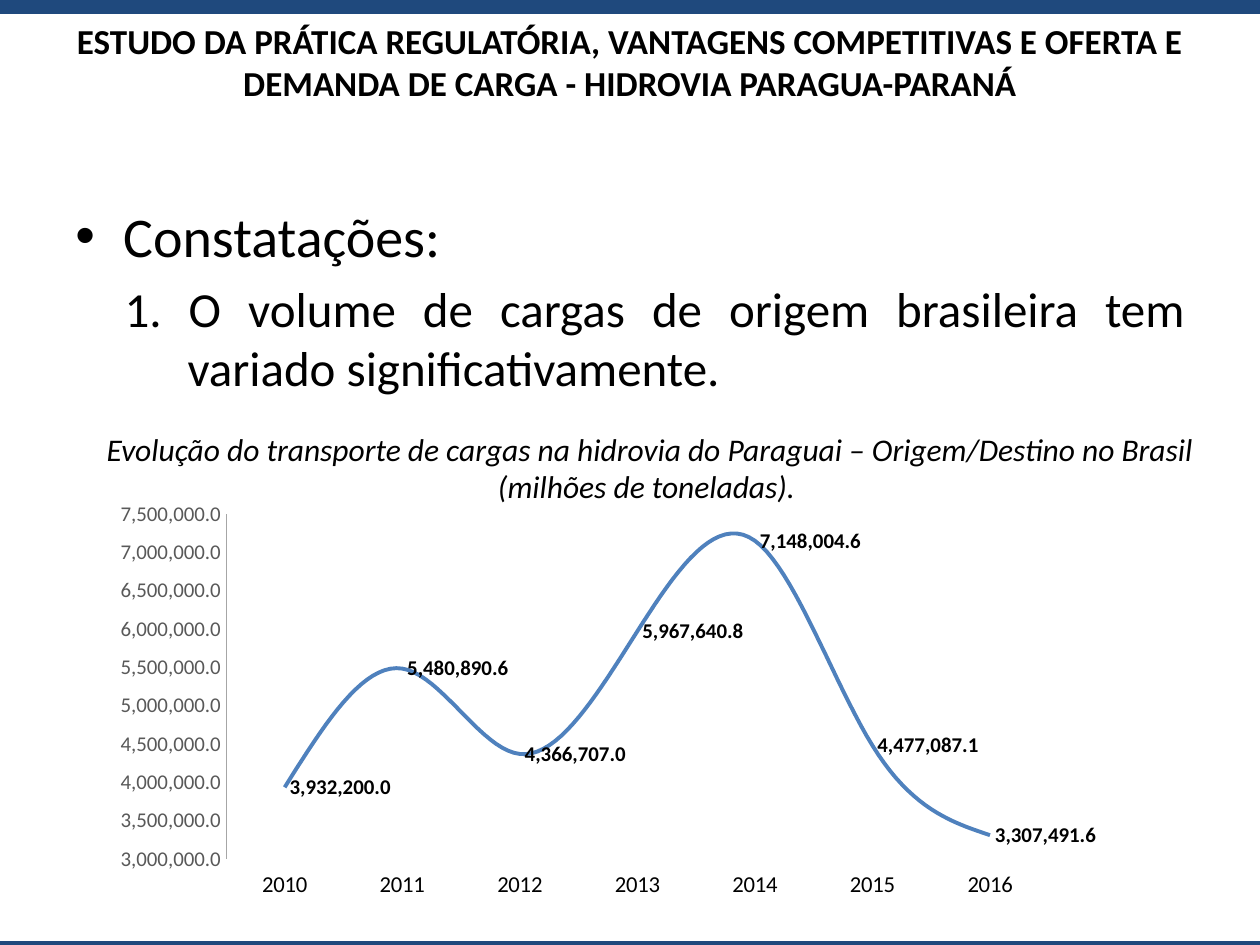
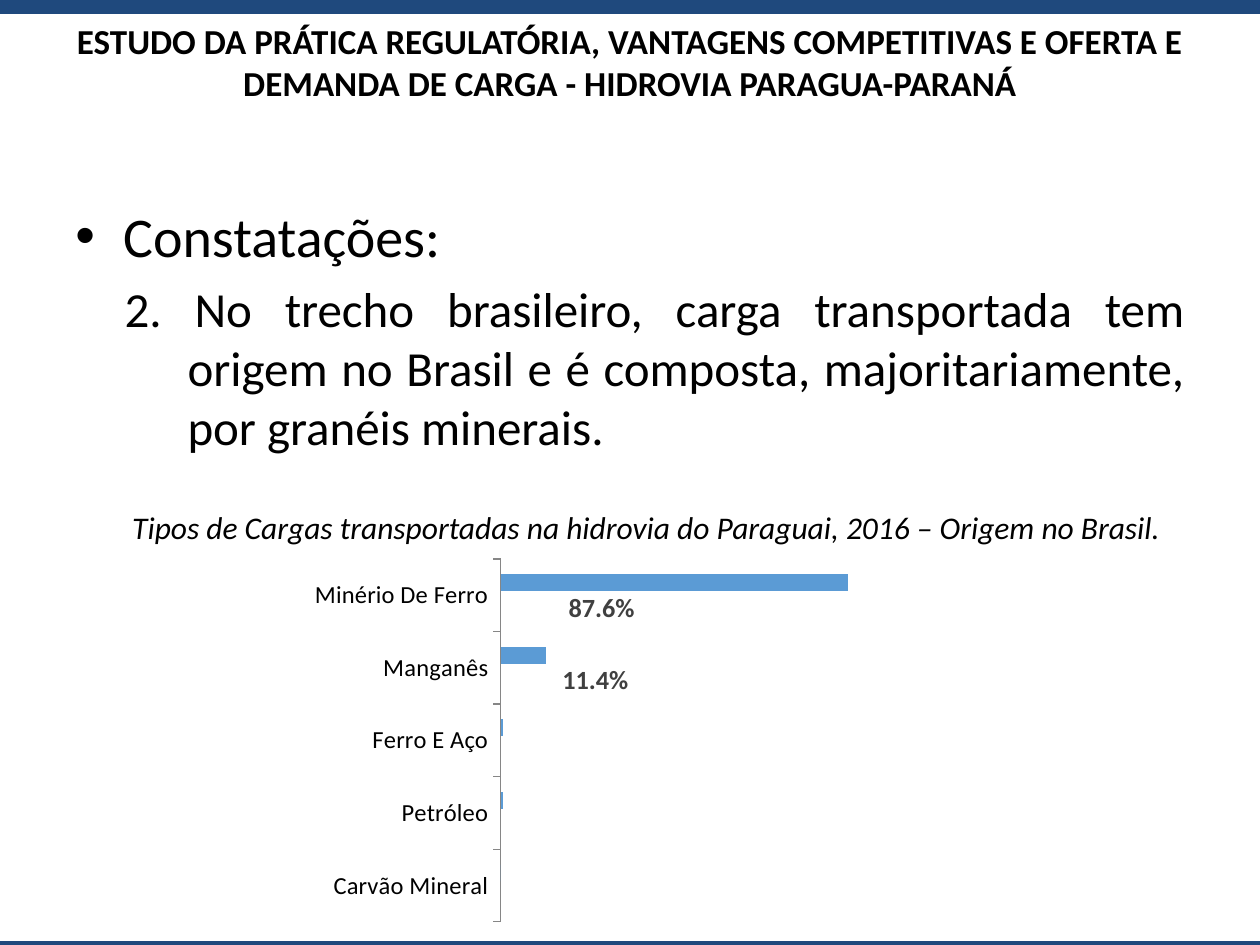
from copy import deepcopy

from lxml import etree
from pptx import Presentation
from pptx.chart.data import CategoryChartData
from pptx.dml.color import RGBColor
from pptx.enum.chart import XL_CHART_TYPE as CT, XL_LABEL_POSITION as LP
from pptx.enum.chart import XL_TICK_LABEL_POSITION as TLP, XL_TICK_MARK as TM
from pptx.enum.shapes import MSO_SHAPE
from pptx.enum.text import MSO_ANCHOR, MSO_AUTO_SIZE, PP_ALIGN
from pptx.oxml import parse_xml
from pptx.oxml.ns import nsdecls, qn
from pptx.util import Inches, Pt

FONT = "Calibri"
NAVY = RGBColor(0x1F, 0x49, 0x7D)
BLACK = RGBColor(0, 0, 0)
LINE_BLUE = RGBColor(0x4F, 0x81, 0xBD)
BAR_BLUE = RGBColor(0x5B, 0x9B, 0xD5)
LABEL_GRAY = RGBColor(0x40, 0x40, 0x40)
SCALE_GRAY = RGBColor(0x59, 0x59, 0x59)
AXIS_GRAY = RGBColor(0xA6, 0xA6, 0xA6)
TICK_GRAY = RGBColor(0x86, 0x86, 0x86)

TITLE = ("ESTUDO DA PRÁTICA REGULATÓRIA, VANTAGENS COMPETITIVAS E OFERTA E "
         "DEMANDA DE CARGA - HIDROVIA PARAGUA-PARANÁ")
CARGO_BY_YEAR = {
    "2010": 3932200, "2011": 5480890.6, "2012": 4366707, "2013": 5967640.8,
    "2014": 7148004.6, "2015": 4477087.1, "2016": 3307491.6,
}
CARGO_TYPES = [
    ("Carvão Mineral", 0, 0),
    ("Petróleo", 0.005, 20000),
    ("Ferro E Aço", 0.005, 20000),
    ("Manganês", 0.114, 380000),
    ("Minério De Ferro", 0.876, 2900000),
]
LABEL_SHIFTS = {3: 0.15, 4: 0.16}


def style_font(font, size, color=BLACK, bold=False, italic=False):
    font.name = FONT
    font.size = Pt(size)
    font.color.rgb = color
    font.bold = bold
    font.italic = italic


def add_run(p, text, size, **style):
    r = p.add_run()
    r.text = text
    style_font(r.font, size, **style)


def add_text_frame(s, x, y, w, h):
    tf = s.shapes.add_textbox(Inches(x), Inches(y), Inches(w), Inches(h)).text_frame
    tf.word_wrap = True
    return tf


def add_band(s, y, h):
    sp = s.shapes.add_shape(MSO_SHAPE.RECTANGLE, 0, Inches(y), Inches(10), Inches(h))
    sp.shadow.inherit = False
    sp.fill.solid()
    sp.fill.fore_color.rgb = NAVY
    sp.line.color.rgb = NAVY
    sp.line.width = Pt(2)


def add_slide(prs):
    s = prs.slides.add_slide(prs.slide_layouts[5])
    add_band(s, 0, 0.1)
    add_band(s, 7.48, 0.02)
    title = s.shapes.title
    title.left, title.top = Inches(0.5), Inches(0.13)
    title.width, title.height = Inches(9), Inches(0.71)
    tf = title.text_frame
    tf.auto_size = MSO_AUTO_SIZE.NONE
    tf.vertical_anchor = MSO_ANCHOR.MIDDLE
    p = tf.paragraphs[0]
    p.alignment = PP_ALIGN.CENTER
    add_run(p, TITLE, 20, bold=True)
    return s


def format_finding(p, text, size, margin, indent):
    p.alignment = PP_ALIGN.JUSTIFY
    p.space_before = Pt(size * 0.2)
    pPr = p._p.get_or_add_pPr()
    pPr.set("marL", str(Inches(margin)))
    pPr.set("indent", str(Inches(indent)))
    add_run(p, text, size)
    return pPr


def add_finding(s, text):
    tf = add_text_frame(s, 0.5, 1.55, 9, 2.4)
    pPr = format_finding(tf.paragraphs[0], "Constatações:", 32, 0.38, -0.38)
    etree.SubElement(pPr, qn("a:buFont")).set("typeface", "Arial")
    etree.SubElement(pPr, qn("a:buChar")).set("char", "•")
    p = tf.add_paragraph()
    p.level = 1
    format_finding(p, text, 28, 0.89, -0.5)


def add_caption(s, text, y, h):
    p = add_text_frame(s, 0.67, y, 8.98, h).paragraphs[0]
    p.alignment = PP_ALIGN.CENTER
    add_run(p, text, 18, italic=True)


def add_chart(s, kind, data, x, y, w, h, plot_box):
    chart = s.shapes.add_chart(
        kind, Inches(x), Inches(y), Inches(w), Inches(h), data).chart
    chart.has_legend = False
    chart.has_title = False
    style_font(chart.font, 10)
    chart.value_axis.has_major_gridlines = False
    set_plot_box(chart, *plot_box)
    return chart


def set_plot_box(chart, x, y, w, h):
    area = chart._chartSpace.chart.plotArea
    for old in area.findall(qn("c:layout")):
        area.remove(old)
    area.insert(0, parse_xml(
        f'<c:layout {nsdecls("c")}><c:manualLayout><c:layoutTarget val="inner"/>'
        f'<c:xMode val="edge"/><c:yMode val="edge"/><c:x val="{x}"/><c:y val="{y}"/>'
        f'<c:w val="{w}"/><c:h val="{h}"/></c:manualLayout></c:layout>'))


def format_labels(labels, fmt, size, color):
    labels.show_value = True
    labels.number_format = fmt
    labels.number_format_is_linked = False
    style_font(labels.font, size, color, bold=True)


def add_evolution_chart(s):
    data = CategoryChartData(number_format="#,##0.0")
    data.categories = CARGO_BY_YEAR.keys()
    data.add_series("Series 1", CARGO_BY_YEAR.values())
    chart = add_chart(s, CT.LINE, data, 0.83, 3.91, 7.87, 3.3,
                      (0.123, 0.051, 0.834, 0.83))
    years, tons = chart.category_axis, chart.value_axis
    years.tick_label_position = TLP.LOW
    years.format.line.fill.background()
    style_font(years.tick_labels.font, 13)
    tons.minimum_scale = 3000000
    tons.maximum_scale = 7500000
    tons.major_unit = 500000
    tons.tick_labels.number_format = "#,##0.0"
    tons.tick_labels.number_format_is_linked = False
    tons.format.line.color.rgb = AXIS_GRAY
    tons.format.line.width = Pt(0.5)
    style_font(tons.tick_labels.font, 12, SCALE_GRAY)
    for axis in (years, tons):
        axis.major_tick_mark = TM.NONE
    ser = chart.plots[0].series[0]
    ser.smooth = True
    ser.format.line.color.rgb = LINE_BLUE
    ser.format.line.width = Pt(2.25)
    format_labels(ser.data_labels, "#,##0.0", 12, BLACK)
    ser.data_labels.position = LP.RIGHT


def point_label(idx, font_xml):
    if idx not in LABEL_SHIFTS:
        body = '<c:delete val="1"/>'
    else:
        body = (f'<c:layout><c:manualLayout><c:x val="{LABEL_SHIFTS[idx]}"/>'
                '<c:y val="0"/></c:manualLayout></c:layout>'
                '<c:numFmt formatCode="0.0%" sourceLinked="0"/>'
                f'{font_xml}<c:dLblPos val="ctr"/>'
                '<c:showLegendKey val="0"/><c:showVal val="1"/><c:showCatName val="0"/>'
                '<c:showSerName val="0"/><c:showPercent val="0"/><c:showBubbleSize val="0"/>')
    return parse_xml(f'<c:dLbl {nsdecls("c", "a")}><c:idx val="{idx}"/>{body}</c:dLbl>')


def hide_leader_lines(dLbls):
    for old in dLbls.findall(qn("c:showLeaderLines")):
        dLbls.remove(old)
    etree.SubElement(dLbls, qn("c:showLeaderLines")).set("val", "0")
    dLbls.append(parse_xml(
        f'<c:extLst {nsdecls("c")}><c:ext uri="{{CE6537A1-D6FC-4f65-9D91-7224C49458BB}}" '
        'xmlns:c15="http://schemas.microsoft.com/office/drawing/2012/chart">'
        '<c15:showLeaderLines val="0"/></c:ext></c:extLst>'))


def move_to_second_axis(chart):
    area = chart._chartSpace.chart.plotArea
    bars = area.find(qn("c:barChart"))
    second = deepcopy(bars)
    bars.remove(bars.findall(qn("c:ser"))[1])
    second.remove(second.findall(qn("c:ser"))[0])
    bars.addnext(second)
    cat, val = area.find(qn("c:catAx")), area.find(qn("c:valAx"))
    new_ids = {ax.find(qn("c:axId")).get("val"): new
               for ax, new in ((cat, "5001"), (val, "5002"))}
    val2, cat2 = deepcopy(val), deepcopy(cat)
    val.addnext(val2)
    val2.addnext(cat2)
    for part in (second, val2, cat2):
        for tag in ("c:axId", "c:crossAx"):
            for ref in part.findall(qn(tag)):
                ref.set("val", new_ids[ref.get("val")])
    cat2.find(qn("c:delete")).set("val", "1")
    val2.find(qn("c:axPos")).set("val", "t")
    val2.find(qn("c:crosses")).set("val", "max")


def add_cargo_type_chart(s):
    names, shares, tons = zip(*CARGO_TYPES)
    data = CategoryChartData()
    data.categories = names
    data.add_series("Series 1", shares, "0.0%")
    data.add_series("Series 2", tons, "#,##0")
    chart = add_chart(s, CT.BAR_CLUSTERED, data, 2.4, 4.38, 5, 3,
                      (0.315, 0.019, 0.665, 0.96))
    cargo = chart.category_axis
    cargo.major_tick_mark = TM.OUTSIDE
    cargo.format.line.color.rgb = TICK_GRAY
    style_font(cargo.tick_labels.font, 14)
    chart.value_axis.visible = False
    plot = chart.plots[0]
    plot.gap_width = 182
    plot.overlap = -49
    plot.vary_by_categories = False
    share, weight = plot.series
    share.format.fill.background()
    weight.format.fill.solid()
    weight.format.fill.fore_color.rgb = BAR_BLUE
    labels = share.data_labels
    format_labels(labels, "0.0%", 15, LABEL_GRAY)
    labels.position = LP.CENTER
    dLbls = labels._element
    font_xml = etree.tostring(dLbls.find(qn("c:txPr")), encoding="unicode")
    for idx in range(len(names)):
        dLbls.insert(idx, point_label(idx, font_xml))
    hide_leader_lines(dLbls)
    move_to_second_axis(chart)


def main():
    prs = Presentation()
    prs.slide_width, prs.slide_height = Inches(10), Inches(7.5)

    s = add_slide(prs)
    add_finding(s, "1. O volume de cargas de origem brasileira tem variado "
                   "significativamente.")
    add_caption(s, "Evolução do transporte de cargas na hidrovia do Paraguai – "
                   "Origem/Destino no Brasil (milhões de toneladas). ", 3.36, 0.71)
    add_evolution_chart(s)

    s = add_slide(prs)
    add_finding(s, "2. No trecho brasileiro, carga transportada tem origem no Brasil "
                   "e é composta, majoritariamente, por granéis minerais.")
    add_caption(s, "Tipos de Cargas transportadas na hidrovia do Paraguai, 2016 – "
                   "Origem no Brasil. ", 3.98, 0.4)
    add_cargo_type_chart(s)

    prs.save("out.pptx")


if __name__ == "__main__":
    main()
